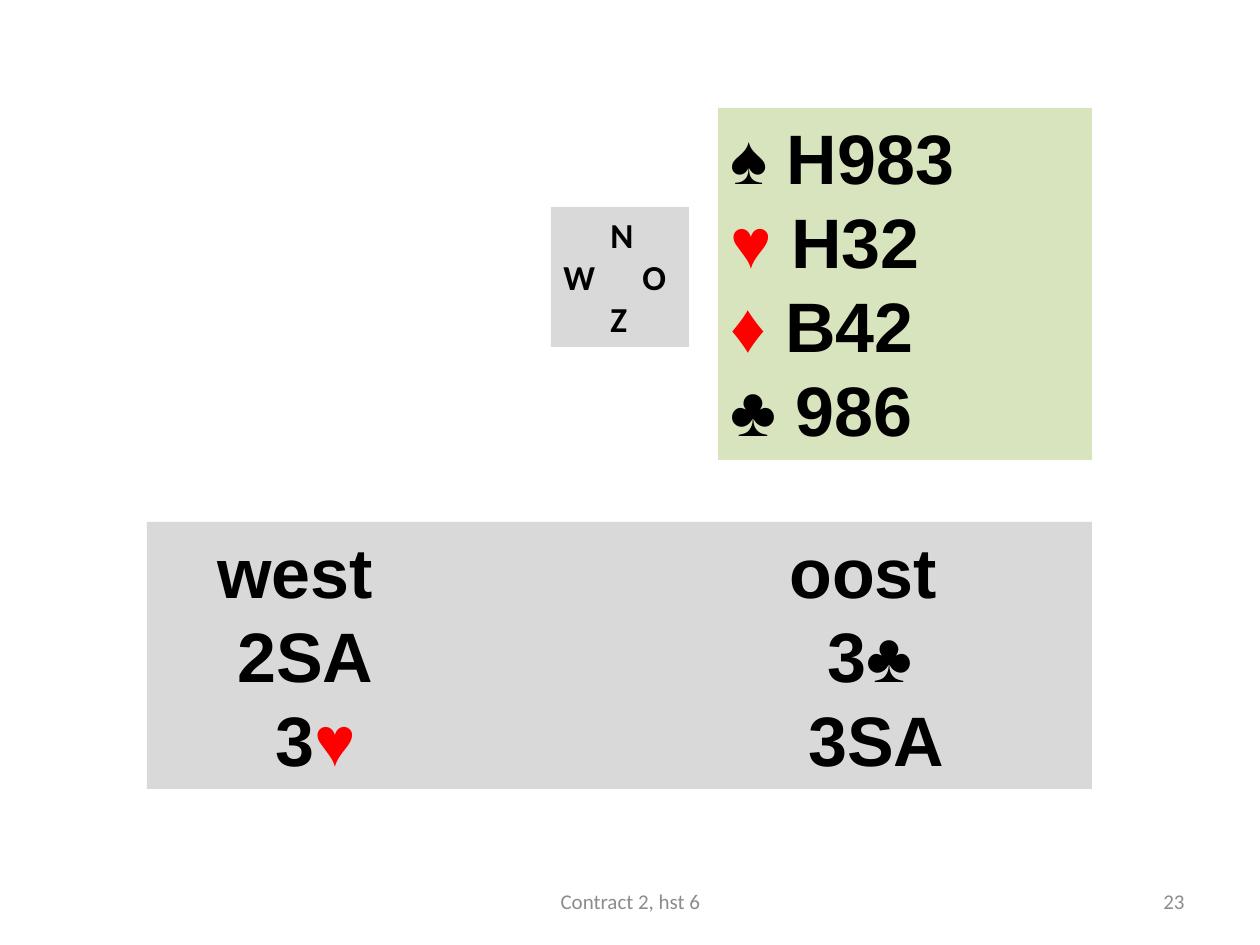
from dataclasses import dataclass
from itertools import groupby

from lxml import etree
from pptx import Presentation
from pptx import util as u
from pptx.dml.color import RGBColor
from pptx.enum import shapes, text
from pptx.oxml.ns import qn


@dataclass(frozen=True)
class Theme:
    hand_fill: str = "D7E4BD"
    panel_fill: str = "D9D9D9"
    ink: str = "000000"
    red: str = "FF0000"
    muted: str = "8C8C8C"
    card_font: str = "Arial"
    label_font: str = "Calibri"
    card_size: int = 40
    compass_size: int = 20
    footer_size: int = 12


THEME = Theme()
RED_SUITS = "♥♦"
ALIGN = text.PP_ALIGN

# Content: each line is its text and its tab stops in px
HAND = [("♠ H983", ()), ("♥ H32", ()), ("♦ B42", ()), ("♣ 986", ())]
COMPASS = [("\tN", (47,)), ("W\tO", (79,)), ("\tZ", (47,))]
BIDDING = [
    ("\twest\toost", (58, 630)),
    ("\t2SA\t3♣", (78, 668)),
    ("\t3♥\t3SA", (116, 649)),
]

# Panels: box in px (left, top, width, height), lines, fill, font, size
PANELS = [
    ((718, 108, 374, 352), HAND, THEME.hand_fill, THEME.card_font, THEME.card_size),
    ((551, 207, 138, 140), COMPASS, THEME.panel_fill, THEME.label_font, THEME.compass_size),
    ((147, 522, 945, 267), BIDDING, THEME.panel_fill, THEME.card_font, THEME.card_size),
]
FOOTERS = [
    ((903, 876, 294, 50), "23", ALIGN.RIGHT),
    ((431, 876, 399, 50), "Contract 2, hst 6", ALIGN.CENTER),
]


def px(value):
    return u.Emu(round(value * 914400 / 126))


def style_run(run, font, size, color, bold=False):
    run.font.name = font
    run.font.size = u.Pt(size)
    run.font.bold = bold
    run.font.color.rgb = RGBColor.from_string(color)


def set_tab_stops(paragraph, stops):
    properties = paragraph._p.get_or_add_pPr()
    tab_list = etree.SubElement(properties, qn("a:tabLst"))
    for stop in stops:
        etree.SubElement(tab_list, qn("a:tab"), pos=str(px(stop)), algn="l")


def add_panel(slide, box, lines, fill, font, size):
    shape = slide.shapes.add_shape(shapes.MSO_SHAPE.RECTANGLE, *map(px, box))
    shape.shadow.inherit = False
    shape.fill.solid()
    shape.fill.fore_color.rgb = RGBColor.from_string(fill)
    shape.line.fill.background()
    frame = shape.text_frame
    frame.word_wrap = True
    frame.auto_size = text.MSO_AUTO_SIZE.SHAPE_TO_FIT_TEXT
    frame.vertical_anchor = text.MSO_ANCHOR.TOP
    for index, (line, stops) in enumerate(lines):
        paragraph = frame.add_paragraph() if index else frame.paragraphs[0]
        paragraph.alignment = ALIGN.LEFT
        if stops:
            set_tab_stops(paragraph, stops)
        # One run per stretch of the same colour
        for is_red, letters in groupby(line, key=lambda letter: letter in RED_SUITS):
            run = paragraph.add_run()
            run.text = "".join(letters)
            style_run(run, font, size, THEME.red if is_red else THEME.ink, bold=True)


def add_footer(slide, box, words, alignment):
    frame = slide.shapes.add_textbox(*map(px, box)).text_frame
    frame.word_wrap = True
    frame.vertical_anchor = text.MSO_ANCHOR.MIDDLE
    frame.text = words
    paragraph = frame.paragraphs[0]
    paragraph.alignment = alignment
    style_run(paragraph.runs[0], THEME.label_font, THEME.footer_size, THEME.muted)


def main():
    presentation = Presentation()
    presentation.slide_width, presentation.slide_height = px(1260), px(945)
    slide = presentation.slides.add_slide(presentation.slide_layouts[6])
    for panel in PANELS:
        add_panel(slide, *panel)
    for footer in FOOTERS:
        add_footer(slide, *footer)
    presentation.save("out.pptx")


if __name__ == "__main__":
    main()
